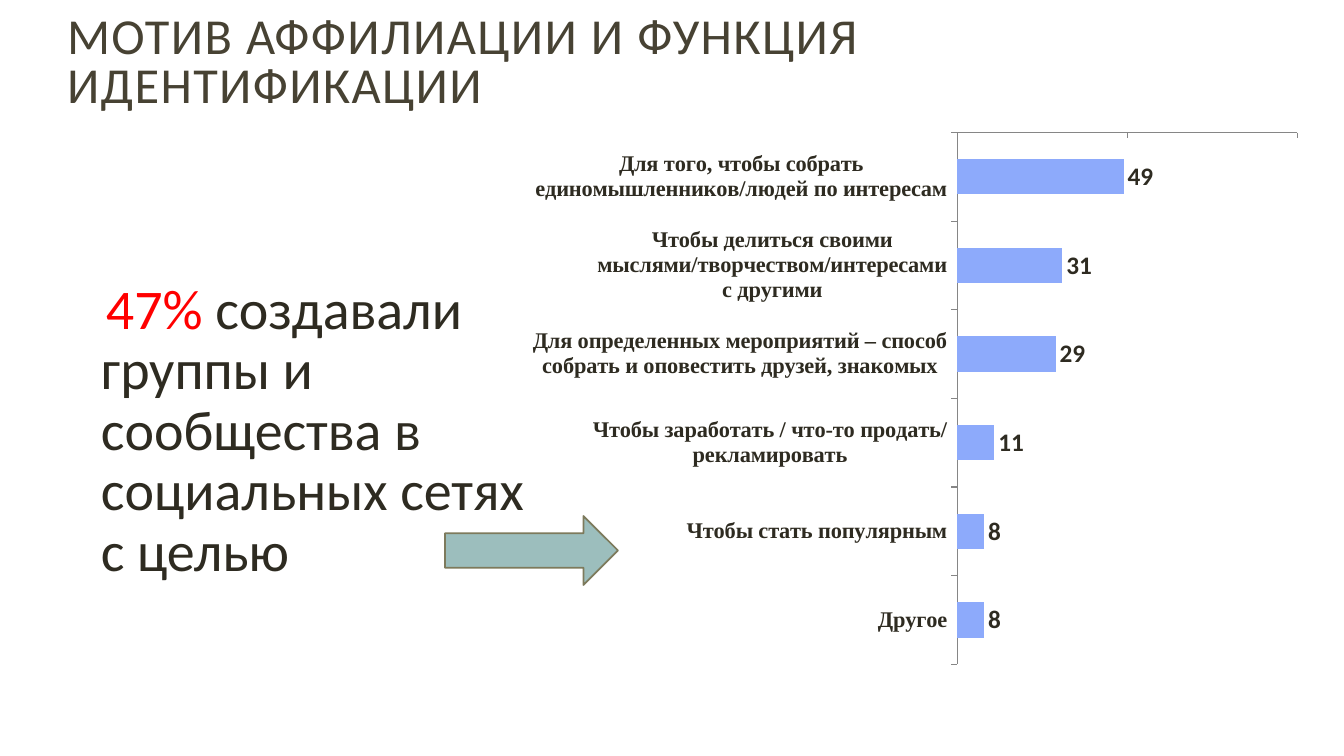
from dataclasses import dataclass

from lxml import etree
from pptx import Presentation
from pptx.chart.chart import Chart
from pptx.chart.data import CategoryChartData
from pptx.dml.color import RGBColor
from pptx.enum.chart import XL_CHART_TYPE, XL_LABEL_POSITION, XL_TICK_LABEL_POSITION, XL_TICK_MARK
from pptx.enum.shapes import MSO_SHAPE
from pptx.enum.text import MSO_ANCHOR, MSO_AUTO_SIZE, PP_ALIGN
from pptx.oxml.ns import qn
from pptx.slide import Slide
from pptx.util import Emu, Pt

BARS = XL_CHART_TYPE.BAR_CLUSTERED
OUTER = XL_LABEL_POSITION.OUTSIDE_END
HIDDEN = XL_TICK_LABEL_POSITION.NONE
TICK_IN, TICK_OUT = XL_TICK_MARK.INSIDE, XL_TICK_MARK.OUTSIDE
ARROW = MSO_SHAPE.RIGHT_ARROW
TOP, MIDDLE = MSO_ANCHOR.TOP, MSO_ANCHOR.MIDDLE
NO_FIT = MSO_AUTO_SIZE.NONE
LEFT = PP_ALIGN.LEFT


def px(count: int) -> Emu:
    return Emu(round(count * 914400 / 100.8))


@dataclass(frozen=True)
class Theme:
    sans: str = "Calibri"
    serif: str = "Times New Roman"
    title: RGBColor = RGBColor(0x47, 0x42, 0x33)
    ink: RGBColor = RGBColor(0x2E, 0x2B, 0x21)
    accent: RGBColor = RGBColor(0xFF, 0x00, 0x00)
    bar: RGBColor = RGBColor(0x8D, 0xAA, 0xFB)
    axis: RGBColor = RGBColor(0x86, 0x86, 0x86)
    arrow: RGBColor = RGBColor(0x9C, 0xBE, 0xBD)
    edge: RGBColor = RGBColor(0x7D, 0x7A, 0x5C)
    title_size: Pt = Pt(36)
    body_size: Pt = Pt(40)
    chart_size: Pt = Pt(10)
    motive_size: Pt = Pt(16)
    value_size: Pt = Pt(18)


@dataclass(frozen=True)
class Box:
    left: int
    top: int
    width: int
    height: int

    def frame(self) -> tuple[Emu, Emu, Emu, Emu]:
        return px(self.left), px(self.top), px(self.width), px(self.height)


@dataclass(frozen=True)
class Motive:
    label: str
    share: int


THEME = Theme()
TITLE_BOX = Box(57, 19, 1068, 91)
CHART_BOX = Box(497, 132, 810, 573)
BODY_BOX = Box(86, 163, 487, 470)
ARROW_BOX = Box(445, 516, 173, 69)
PLOT = {"x": 0.568, "y": 0, "w": 0.42, "h": 0.929}
MOTIVES = [
    Motive("Для того, чтобы собрать единомышленников/людей по интересам", 49),
    Motive("Чтобы делиться своими мыслями/творчеством/интересами с другими", 31),
    Motive("Для определенных мероприятий – способ собрать и оповестить друзей, знакомых", 29),
    Motive("Чтобы заработать / что-то продать/ рекламировать", 11),
    Motive("Чтобы стать популярным", 8),
    Motive("Другое", 8),
]


def add_title(slide: Slide, box: Box) -> None:
    title = slide.shapes.title
    title.left, title.top, title.width, title.height = box.frame()
    frame = title.text_frame
    frame.text = "МОТИВ АФФИЛИАЦИИ И ФУНКЦИЯ ИДЕНТИФИКАЦИИ"
    frame.word_wrap = True
    frame.auto_size = NO_FIT
    frame.vertical_anchor = MIDDLE
    para = frame.paragraphs[0]
    para.alignment = LEFT
    para.line_spacing = 0.8
    para.font.name = THEME.sans
    para.font.size = THEME.title_size
    para.font.color.rgb = THEME.title
    para.runs[0].font.element.set("spc", "100") if hasattr(para.runs[0].font, "element") else \
        para.runs[0]._r.get_or_add_rPr().set("spc", "100")


def set_plot(chart: Chart) -> None:
    area = chart._chartSpace.chart.plotArea
    for old in area.findall(qn("c:layout")):
        area.remove(old)
    layout = etree.Element(qn("c:layout"))
    area.insert(0, layout)
    manual = etree.SubElement(layout, qn("c:manualLayout"))
    parts = {"layoutTarget": "inner", "xMode": "edge", "yMode": "edge", **PLOT}
    for name, value in parts.items():
        etree.SubElement(manual, qn(f"c:{name}")).set("val", str(value))


def add_bars(slide: Slide, box: Box, motives: list[Motive]) -> None:
    data = CategoryChartData(number_format="0")
    data.categories = [motive.label for motive in motives]
    data.add_series("Series 1", [motive.share for motive in motives])
    chart = slide.shapes.add_chart(BARS, *box.frame(), data).chart
    chart.has_legend = False
    chart.has_title = False
    chart.font.name = THEME.sans
    chart.font.size = THEME.chart_size
    chart.font.color.rgb = THEME.ink
    set_plot(chart)

    names, scale = chart.category_axis, chart.value_axis
    for axis, tick in ((names, TICK_OUT), (scale, TICK_IN)):
        axis.has_major_gridlines = False
        axis.major_tick_mark = tick
        axis.format.line.color.rgb = THEME.axis
        axis.format.line.width = Pt(0.75)
    names.reverse_order = True
    font = names.tick_labels.font
    font.name = THEME.serif
    font.size = THEME.motive_size
    font.bold = True
    font.color.rgb = THEME.ink
    scale.minimum_scale = 0
    scale.maximum_scale = 100
    scale.major_unit = 50
    scale.tick_label_position = HIDDEN

    plot = chart.plots[0]
    plot.gap_width = 150
    plot.vary_by_categories = False
    fill = plot.series[0].format.fill
    fill.solid()
    fill.fore_color.rgb = THEME.bar
    plot.has_data_labels = True
    labels = plot.data_labels
    labels.show_value = True
    labels.position = OUTER
    labels.number_format = "0"
    labels.number_format_is_linked = False
    labels.font.name = THEME.sans
    labels.font.size = THEME.value_size
    labels.font.bold = True
    labels.font.color.rgb = THEME.ink


def add_body(slide: Slide, box: Box) -> None:
    frame = slide.shapes.add_textbox(*box.frame()).text_frame
    frame.word_wrap = True
    frame.vertical_anchor = TOP
    frame.margin_left = frame.margin_bottom = px(5)
    frame.margin_top = px(118)
    frame.margin_right = px(35)
    para = frame.paragraphs[0]
    para.line_spacing = 0.9
    para.font.name = THEME.sans
    para.font.size = THEME.body_size
    props = para._p.get_or_add_pPr()
    props.set("marL", str(px(10)))
    props.set("indent", str(px(5)))
    texts = (
        ("47% ", THEME.accent),
        ("создавали группы и сообщества в социальных сетях с целью", THEME.ink),
    )
    for text, color in texts:
        run = para.add_run()
        run.text = text
        run.font.color.rgb = color


def add_arrow(slide: Slide, box: Box) -> None:
    arrow = slide.shapes.add_shape(ARROW, *box.frame())
    arrow.shadow.inherit = False
    arrow.fill.solid()
    arrow.fill.fore_color.rgb = THEME.arrow
    arrow.line.color.rgb = THEME.edge
    arrow.line.width = Pt(1.25)


def main() -> None:
    deck = Presentation()
    deck.slide_width, deck.slide_height = px(1344), px(756)
    slide = deck.slides.add_slide(deck.slide_layouts[5])
    add_title(slide, TITLE_BOX)
    add_bars(slide, CHART_BOX, MOTIVES)
    add_body(slide, BODY_BOX)
    add_arrow(slide, ARROW_BOX)
    deck.save("out.pptx")


if __name__ == "__main__":
    main()
